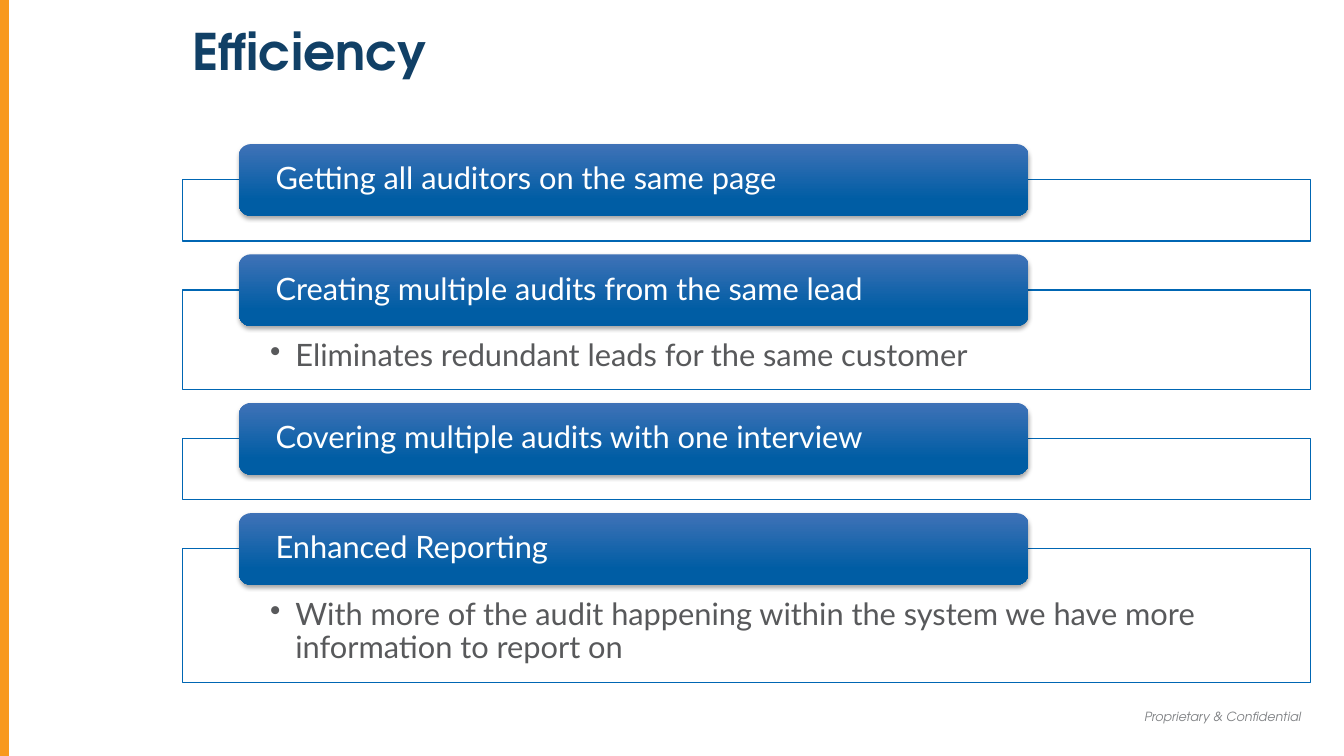
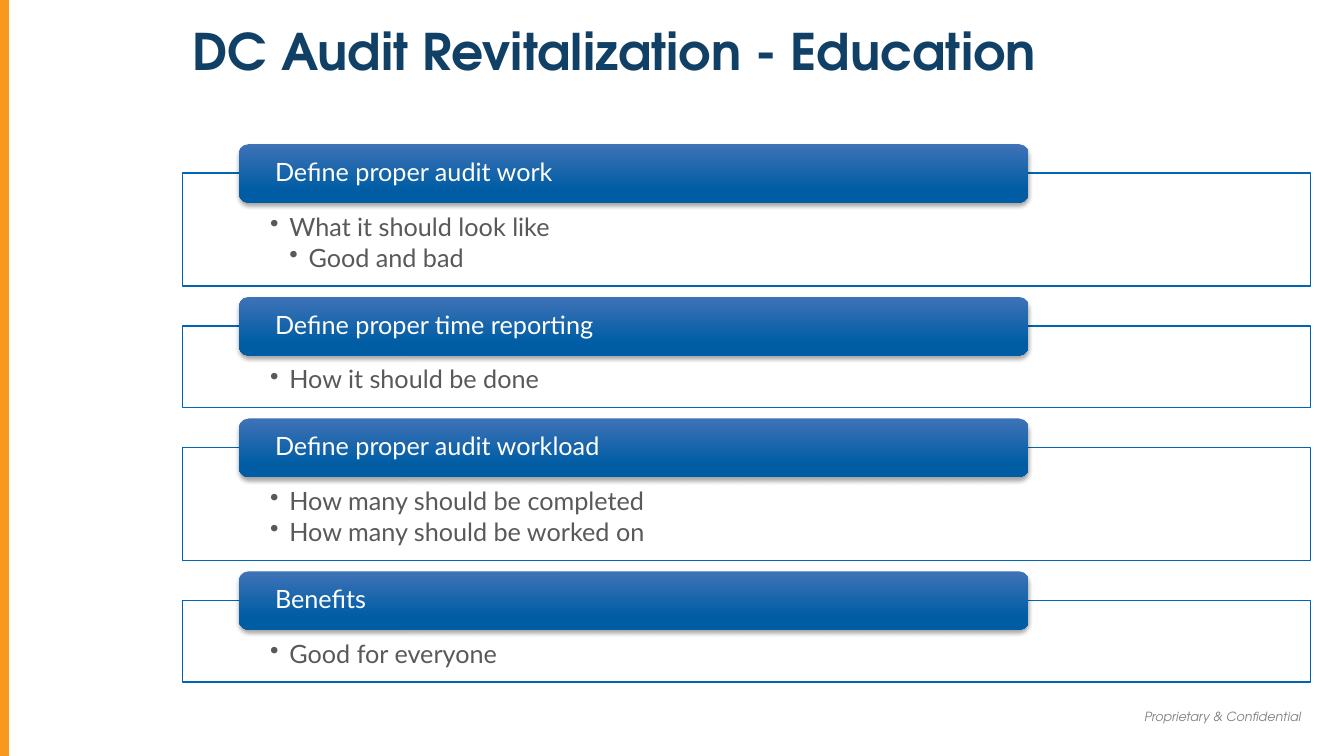
"""Builds two audit slides, each a stack of headed panels."""
from dataclasses import dataclass

from lxml import etree
from pptx import Presentation
from pptx.dml.color import RGBColor
from pptx.enum.shapes import MSO_CONNECTOR, MSO_SHAPE
from pptx.enum.text import MSO_ANCHOR, PP_ALIGN
from pptx.oxml.ns import qn
from pptx.util import Inches, Pt

RECT, ROUNDED = MSO_SHAPE.RECTANGLE, MSO_SHAPE.ROUNDED_RECTANGLE
STRAIGHT = MSO_CONNECTOR.STRAIGHT
TOP, MIDDLE, BOTTOM = MSO_ANCHOR.TOP, MSO_ANCHOR.MIDDLE, MSO_ANCHOR.BOTTOM
LEFT, RIGHT = PP_ALIGN.LEFT, PP_ALIGN.RIGHT


@dataclass(frozen=True)
class Theme:
    """Colours, fonts and type sizes."""
    title: str = "114066"
    accent: str = "F8991D"
    outline: str = "0066B3"
    tab_top: str = "3F72B7"
    tab_base: str = "005DA4"
    body: str = "58595B"
    muted: str = "808285"
    white: str = "FFFFFF"
    display: str = "TeX Gyre Adventor"
    text: str = "Lato"
    title_size: int = 36
    footer_size: int = 9


T = Theme()
FOOTER = "Proprietary & Confidential"

# title, type size, bullet indent, topics: (heading, text lines, [(level, bullet)])
SLIDES = [
    ("Efficiency", 22, 0.25, [
        ("Getting all auditors on the same page", 0, []),
        ("Creating multiple audits from the same lead", 1,
         [(1, "Eliminates redundant leads for the same customer")]),
        ("Covering multiple audits with one interview", 0, []),
        ("Enhanced Reporting", 2,
         [(1, "With more of the audit happening within the system "
              "we have more information to report on")]),
    ]),
    ("DC Audit Revitalization - Education", 18, 0.19, [
        ("Define proper audit work", 2,
         [(1, "What it should look like"), (2, "Good and bad")]),
        ("Define proper time reporting", 1, [(1, "How it should be done")]),
        ("Define proper audit workload", 2,
         [(1, "How many should be completed"), (1, "How many should be worked on")]),
        ("Benefits", 1, [(1, "Good for everyone")]),
    ]),
]

WIDTH, HEIGHT = 13.33, 7.5
MARGIN, CONTENT_W = 1.81, 11.19
STACK_TOP = 1.43
TAB_X, TAB_W = MARGIN + 0.05 * CONTENT_W, 0.7 * CONTENT_W


def rgb(value):
    return RGBColor.from_string(value)


def effects(shape):
    return etree.SubElement(shape._element.spPr, qn("a:effectLst"))


def add_run(p, text, size, font, color, bold=False, italic=False):
    r = p.add_run()
    r.text = text
    r.font.size, r.font.name = Pt(size), font
    r.font.bold, r.font.italic = bold, italic
    r.font.color.rgb = rgb(color)


def set_frame(shape, anchor, insets=(0.1, 0.05, 0.1, 0.05)):
    tf = shape.text_frame
    tf.word_wrap, tf.vertical_anchor = True, anchor
    tf.margin_left, tf.margin_top, tf.margin_right, tf.margin_bottom = map(Inches, insets)
    return tf


def add_label(s, box, anchor, align, text, **style):
    tf = set_frame(s.shapes.add_textbox(*map(Inches, box)), anchor)
    p = tf.paragraphs[0]
    p.alignment = align
    add_run(p, text, font=T.display, **style)


def add_frame(s, title):
    add_label(s, (WIDTH - 2.36, 6.91, 2.03, 0.32), BOTTOM, RIGHT, FOOTER,
              size=T.footer_size, color=T.muted, italic=True)
    band = s.shapes.add_connector(STRAIGHT, Inches(0.03), 0, Inches(0.03), Inches(HEIGHT))
    band.line.color.rgb, band.line.width = rgb(T.accent), Pt(8)
    effects(band)
    add_label(s, (MARGIN, 0.15, CONTENT_W, 1), TOP, LEFT, title,
              size=T.title_size, color=T.title, bold=True)


def add_bullet(p, level, indent):
    pPr = p._p.get_or_add_pPr()
    pPr.set("marL", str(Inches(indent * level)))
    pPr.set("indent", str(-Inches(indent)))
    etree.SubElement(pPr, qn("a:buChar")).set("char", "•")


def add_panel(s, y, h, size, indent, bullets):
    sp = s.shapes.add_shape(RECT, *map(Inches, (MARGIN, y, CONTENT_W, h)))
    sp.shadow.inherit = False
    sp.fill.solid()
    sp.fill.fore_color.rgb = rgb(T.white)
    color = sp._element.spPr.find(qn("a:solidFill"))[0]
    etree.SubElement(color, qn("a:alpha")).set("val", "90000")
    sp.line.color.rgb, sp.line.width = rgb(T.outline), Pt(1)
    tf = set_frame(sp, TOP, (0.87, 0.0227 * size, 0.87, 0.0077 * size))
    for i, (level, text) in enumerate(bullets):
        p = tf.add_paragraph() if i else tf.paragraphs[0]
        p.alignment, p.level = LEFT, level
        p.line_spacing, p.space_after = 0.9, Pt(0.15 * size)
        add_bullet(p, level, indent)
        add_run(p, text, size, T.text, T.body)


def add_tab(s, y, h, size, heading):
    sp = s.shapes.add_shape(ROUNDED, *map(Inches, (TAB_X, y, TAB_W, h)))
    sp.line.fill.background()
    sp.fill.gradient()
    sp.fill.gradient_angle = 270
    for stop, color, pos in zip(sp.fill.gradient_stops, (T.tab_top, T.tab_base), (0, 0.78)):
        stop.color.rgb, stop.position = rgb(color), pos
    shadow = etree.SubElement(effects(sp), qn("a:outerShdw"), blurRad=str(Pt(3)),
                              dist=str(Pt(2)), dir="5400000", rotWithShape="0")
    black = etree.SubElement(shadow, qn("a:srgbClr"), val="000000")
    etree.SubElement(black, qn("a:alpha"), val="35000")
    p = set_frame(sp, MIDDLE, (0.33, 0, 0.33, 0)).paragraphs[0]
    p.alignment, p.line_spacing = LEFT, 0.9
    add_run(p, heading, size, T.text, T.white)


def panel_height(size, lines, paragraphs):
    if not lines:
        return 0.0277 * size
    return size * (0.045 + 0.0155 * (lines - 1) + 0.0017 * (paragraphs - 1))


def add_stack(s, size, indent, topics):
    tab_h, overlap, gap = 0.0323 * size, 0.016 * size, 0.006 * size
    y = STACK_TOP
    for heading, lines, bullets in topics:
        h = panel_height(size, lines, len(bullets))
        add_panel(s, y + overlap, h, size, indent, bullets)
        add_tab(s, y, tab_h, size, heading)
        y += overlap + h + gap


def main():
    prs = Presentation()
    prs.slide_width, prs.slide_height = Inches(WIDTH), Inches(HEIGHT)
    for title, size, indent, topics in SLIDES:
        s = prs.slides.add_slide(prs.slide_layouts[6])
        add_frame(s, title)
        add_stack(s, size, indent, topics)
    prs.save("out.pptx")


if __name__ == "__main__":
    main()
